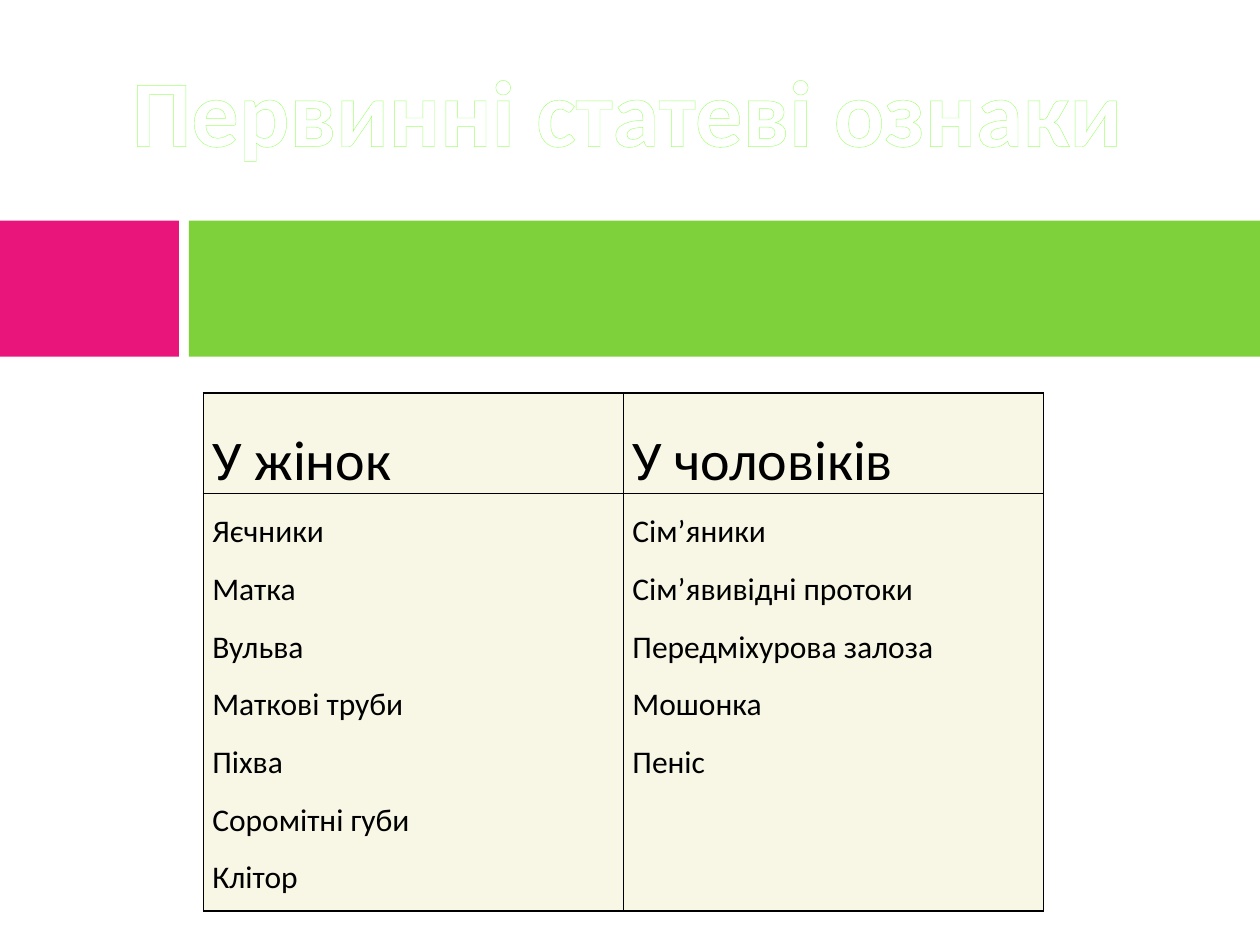
"""Build a slide with a title, a two-colour band and a comparison table."""
from dataclasses import dataclass
from lxml import etree
from pptx import Presentation
from pptx import util as u
from pptx.dml.color import RGBColor
from pptx.enum import shapes, text
from pptx.oxml import ns


@dataclass(frozen=True)
class Theme:
    font: str = "Calibri"
    pink: str = "EA157A"
    green: str = "7FD13B"
    glow: str = "A1FF70"
    cream: str = "F8F7E5"
    white: str = "FFFFFF"
    black: str = "000000"
    title: int = 54
    head: int = 32
    body: int = 18


def write(frame, lines, size, color, bold=False, align=None, space=None):
    frame.text = "\n".join(lines)
    for para in frame.paragraphs:
        para.alignment = align
        para.line_spacing = space
        for run in para.runs:
            run.font.name = theme.font
            run.font.size = u.Pt(size)
            run.font.bold = bold
            run.font.color.rgb = RGBColor.from_string(color)


def stroke(parent, tag, color, width):
    line = etree.Element(ns.qn(tag), w=str(u.Pt(width)))
    fill = etree.SubElement(line, ns.qn("a:solidFill"))
    etree.SubElement(fill, ns.qn("a:srgbClr"), val=color)
    return line if parent is None else parent.insert(0, line)


theme = Theme()
deck = Presentation()
deck.slide_width, deck.slide_height = u.Cm(25.4), u.Cm(19.05)
slide = deck.slides.add_slide(deck.slide_layouts[5])

for left, width, color in ((0, 3.61, theme.pink), (3.81, 21.59, theme.green)):
    band = slide.shapes.add_shape(
        shapes.MSO_SHAPE.RECTANGLE, u.Cm(left), u.Cm(4.45), u.Cm(width), u.Cm(2.74))
    band.shadow.inherit = False
    band.fill.solid()
    band.fill.fore_color.rgb = RGBColor.from_string(color)
    band.line.fill.background()

title = slide.shapes.title
title.left, title.top = u.Cm(2.31), u.Cm(0.91)
title.width, title.height = u.Cm(20.68), u.Cm(2.57)
frame = title.text_frame
write(frame, ["Первинні статеві ознаки"], theme.title, theme.white,
      bold=True, align=text.PP_ALIGN.CENTER)
frame.word_wrap = False
frame.auto_size = text.MSO_AUTO_SIZE.SHAPE_TO_FIT_TEXT
stroke(frame.paragraphs[0].runs[0].font._element, "a:ln", theme.glow, 2.48)

heads = ("У жінок", "У чоловіків")
organs = (
    ("Яєчники", "Матка", "Вульва", "Маткові труби", "Піхва", "Соромітні губи", "Клітор"),
    ("Сім’яники", "Сім’явивідні протоки", "Передміхурова залоза", "Мошонка", "Пеніс"),
)
table = slide.shapes.add_table(
    2, 2, u.Cm(4.1), u.Cm(7.92), u.Cm(16.94), u.Cm(9.6)).table
table.first_row = table.horz_banding = False
for row, height in zip(table.rows, (1.19, 8.41)):
    row.height = u.Cm(height)

for col, (head, names) in enumerate(zip(heads, organs)):
    table.columns[col].width = u.Cm(8.47)
    for row, (lines, size) in enumerate((([head], theme.head), (names, theme.body))):
        cell = table.cell(row, col)
        write(cell.text_frame, lines, size, theme.black, space=1.5)
        cell.margin_left = cell.margin_right = u.Cm(0.18)
        cell.margin_top = cell.margin_bottom = 0
        cell.fill.solid()
        cell.fill.fore_color.rgb = RGBColor.from_string(theme.cream)
        for side in ("a:lnB", "a:lnT", "a:lnR", "a:lnL"):
            stroke(cell._tc.get_or_add_tcPr(), side, theme.black, 1)

deck.save("out.pptx")
